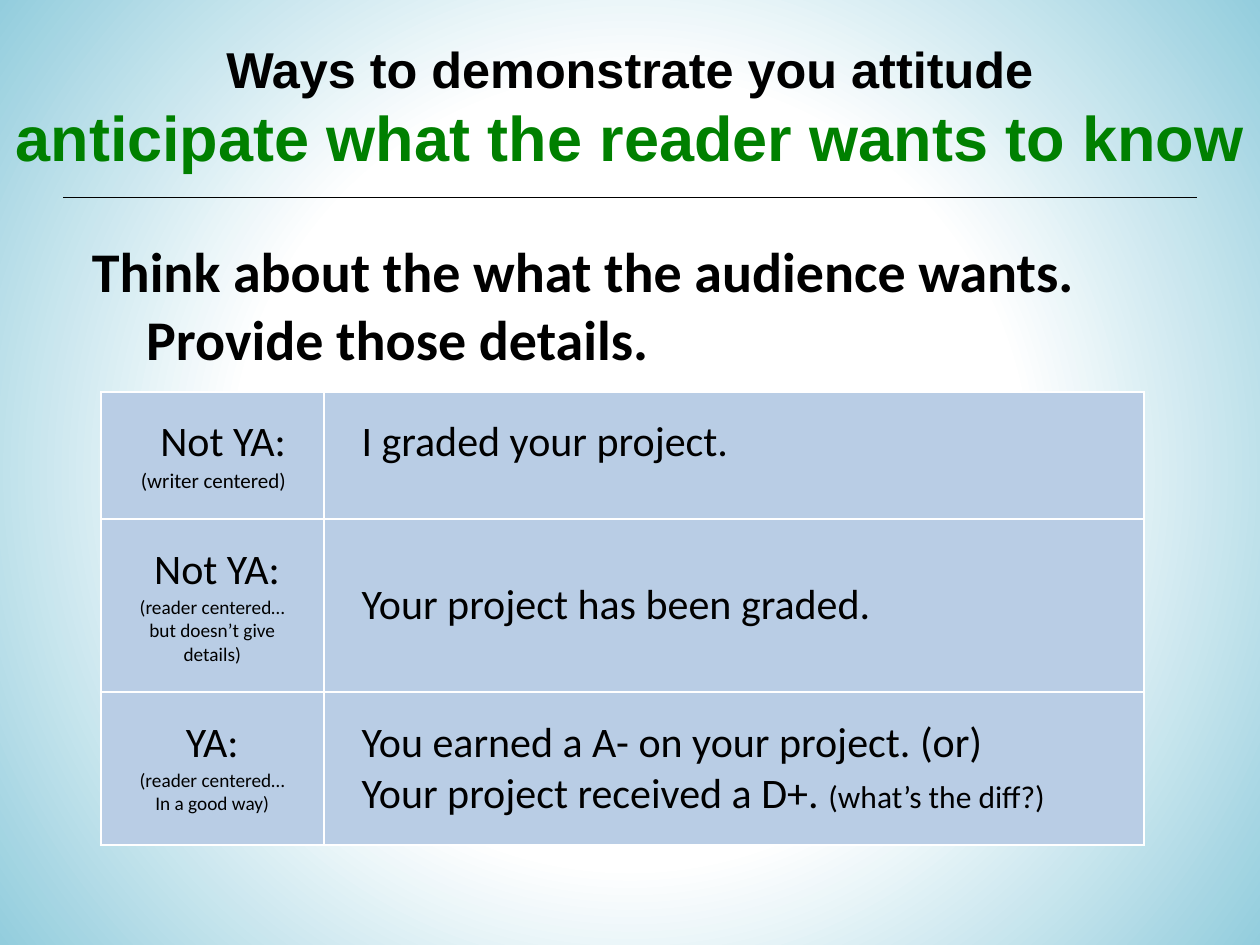
from dataclasses import dataclass

from lxml.etree import SubElement
from pptx import Presentation
from pptx.dml.color import RGBColor as RGB
from pptx.enum.shapes import MSO_CONNECTOR as CONNECTOR
from pptx.enum.text import MSO_ANCHOR as ANCHOR, MSO_AUTO_SIZE as AUTO, PP_ALIGN as ALIGN
from pptx.oxml import parse_xml
from pptx.oxml.ns import nsdecls, qn
from pptx.util import Inches, Pt


@dataclass(frozen=True)
class Theme:
    ink: str = "000000"
    accent: str = "008000"
    light: str = "FFFFFF"
    edge: str = "93CDDD"
    cell: str = "B9CDE5"
    heading_font: str = "Arial"
    body_font: str = "Calibri"
    kicker: float = 28.8
    headline: float = 36
    lead: float = 32
    example: float = 24
    aside: float = 18
    note: float = 12
    small_note: float = 11


T = Theme()


@dataclass(frozen=True)
class Run:
    text: str
    size: float
    color: str = T.ink
    font: str = T.body_font
    bold: bool = False


@dataclass(frozen=True)
class Cell:
    lines: tuple[tuple[Run, ...], ...]
    align: ALIGN = ALIGN.LEFT
    anchor: ANCHOR = ANCHOR.TOP


@dataclass(frozen=True)
class Row:
    height: float
    label: Cell
    example: Cell


TITLE = (
    Run("Ways to demonstrate you attitude", T.kicker, font=T.heading_font, bold=True),
    Run("anticipate what the reader wants to know", T.headline, T.accent, T.heading_font, True),
)
LEAD = Run("Think about the what the audience wants. Provide those details.", T.lead, bold=True)


def label(name: str, *notes: str, size: float = T.small_note, align: ALIGN = ALIGN.CENTER) -> Cell:
    return Cell(((Run(name, T.example),), *((Run(n, size),) for n in notes)), align)


def example(text: str) -> tuple[Run, ...]:
    return (Run(text, T.example),)


COLUMNS = (1.77, 6.51)
ROWS = (
    Row(1.01, label("Not YA:", "(writer centered)", size=T.note, align=ALIGN.RIGHT),
        Cell((example("I graded your project."),))),
    Row(1.37, label(" Not YA:", "(reader centered… but doesn’t give details)"),
        Cell((example("Your project has been graded."),), anchor=ANCHOR.MIDDLE)),
    Row(1.21, label("YA:", "(reader centered…", "In a good way)"),
        Cell((example("You earned a A- on your project. (or)"),
              (*example("Your project received a D+. "), Run("(what’s the diff?)", T.aside))))),
)


def add_run(p, run: Run) -> None:
    r = p.add_run()
    r.text = run.text
    r.font.size, r.font.name, r.font.bold = Pt(run.size), run.font, run.bold
    r.font.color.rgb = RGB.from_string(run.color)


def place(sp, left: float, top: float, width: float, height: float) -> None:
    sp.left, sp.top, sp.width, sp.height = map(Inches, (left, top, width, height))


def set_background(slide) -> None:
    """Fill with a radial gradient, light in the middle."""
    fill = slide.background.fill
    fill.solid()
    solid = slide.background._cSld.bg.bgPr.find(qn("a:solidFill"))
    stops = "".join(f'<a:gs pos="{pos}"><a:srgbClr val="{color}"/></a:gs>'
                    for pos, color in ((50000, T.light), (100000, T.edge)))
    solid.getparent().replace(solid, parse_xml(
        f'<a:gradFill {nsdecls("a")} rotWithShape="1"><a:gsLst>{stops}</a:gsLst><a:path path="circle">'
        '<a:fillToRect l="50000" t="50000" r="50000" b="50000"/></a:path></a:gradFill>'))


def fill_title(sp) -> None:
    place(sp, 0, 0.07, 10, 1.55)
    tf = sp.text_frame
    tf.auto_size, tf.vertical_anchor = AUTO.NONE, ANCHOR.MIDDLE
    p = tf.paragraphs[0]
    p.alignment = ALIGN.CENTER
    for i, run in enumerate(TITLE):
        if i:
            p.add_line_break()
        add_run(p, run)


def fill_lead(sp) -> None:
    place(sp, 0.5, 1.83, 8.88, 4.67)
    tf = sp.text_frame
    tf.auto_size = AUTO.NONE
    p = tf.paragraphs[0]
    add_run(p, LEAD)
    pPr = p._p.get_or_add_pPr()
    pPr.set("marL", str(Inches(0.56)))
    pPr.set("indent", str(Inches(-0.43)))
    SubElement(pPr, qn("a:buNone"))


def add_rule(slide) -> None:
    line = slide.shapes.add_connector(
        CONNECTOR.STRAIGHT, Inches(0.5), Inches(1.57), Inches(9.5), Inches(1.57))
    line.line.color.rgb = RGB.from_string(T.ink)
    line.line.width = Pt(0.75)
    SubElement(line._element.spPr, qn("a:effectLst"))


def fill_cell(cell, content: Cell) -> None:
    cell.margin_left = cell.margin_right = Inches(0.3)
    cell.margin_top = cell.margin_bottom = Inches(0.2)
    cell.vertical_anchor = content.anchor
    tcPr = cell._tc.get_or_add_tcPr()
    for side in ("lnL", "lnR", "lnT", "lnB"):
        ln = SubElement(tcPr, qn(f"a:{side}"), w=str(Pt(1)))
        SubElement(SubElement(ln, qn("a:solidFill")), qn("a:srgbClr"), val=T.light)
    cell.fill.solid()
    cell.fill.fore_color.rgb = RGB.from_string(T.cell)
    tf = cell.text_frame
    for i, line in enumerate(content.lines):
        p = tf.add_paragraph() if i else tf.paragraphs[0]
        p.alignment = content.align
        for run in line:
            add_run(p, run)


def add_examples(slide) -> None:
    height = sum(row.height for row in ROWS)
    table = slide.shapes.add_table(
        len(ROWS), len(COLUMNS), Inches(0.8), Inches(3.11),
        Inches(sum(COLUMNS)), Inches(height)).table
    table.first_row = table.horz_banding = False
    for column, width in zip(table.columns, COLUMNS):
        column.width = Inches(width)
    for i, row in enumerate(ROWS):
        table.rows[i].height = Inches(row.height)
        fill_cell(table.cell(i, 0), row.label)
        fill_cell(table.cell(i, 1), row.example)


def main() -> None:
    prs = Presentation()
    prs.slide_width, prs.slide_height = Inches(10), Inches(7.5)
    slide = prs.slides.add_slide(prs.slide_layouts[1])
    set_background(slide)
    fill_title(slide.shapes.title)
    fill_lead(slide.placeholders[1])
    add_rule(slide)
    add_examples(slide)
    prs.save("out.pptx")


if __name__ == "__main__":
    main()
